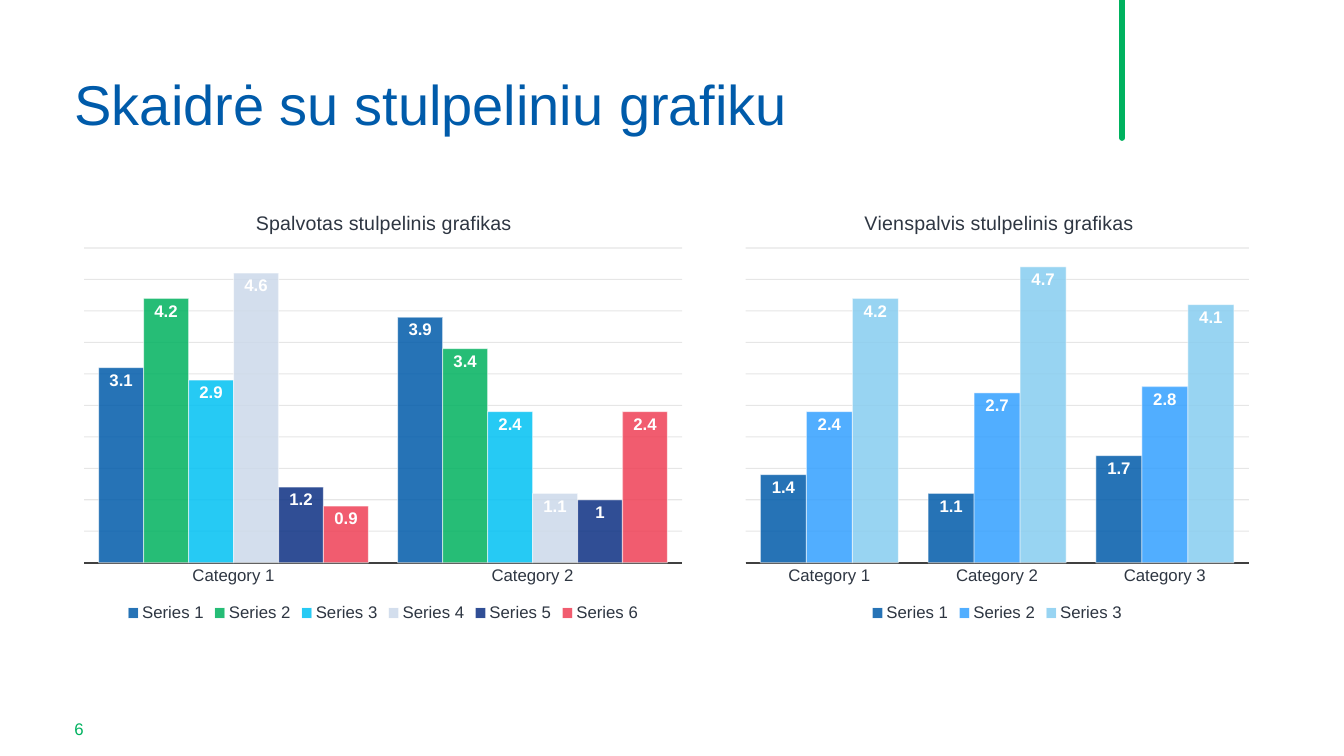
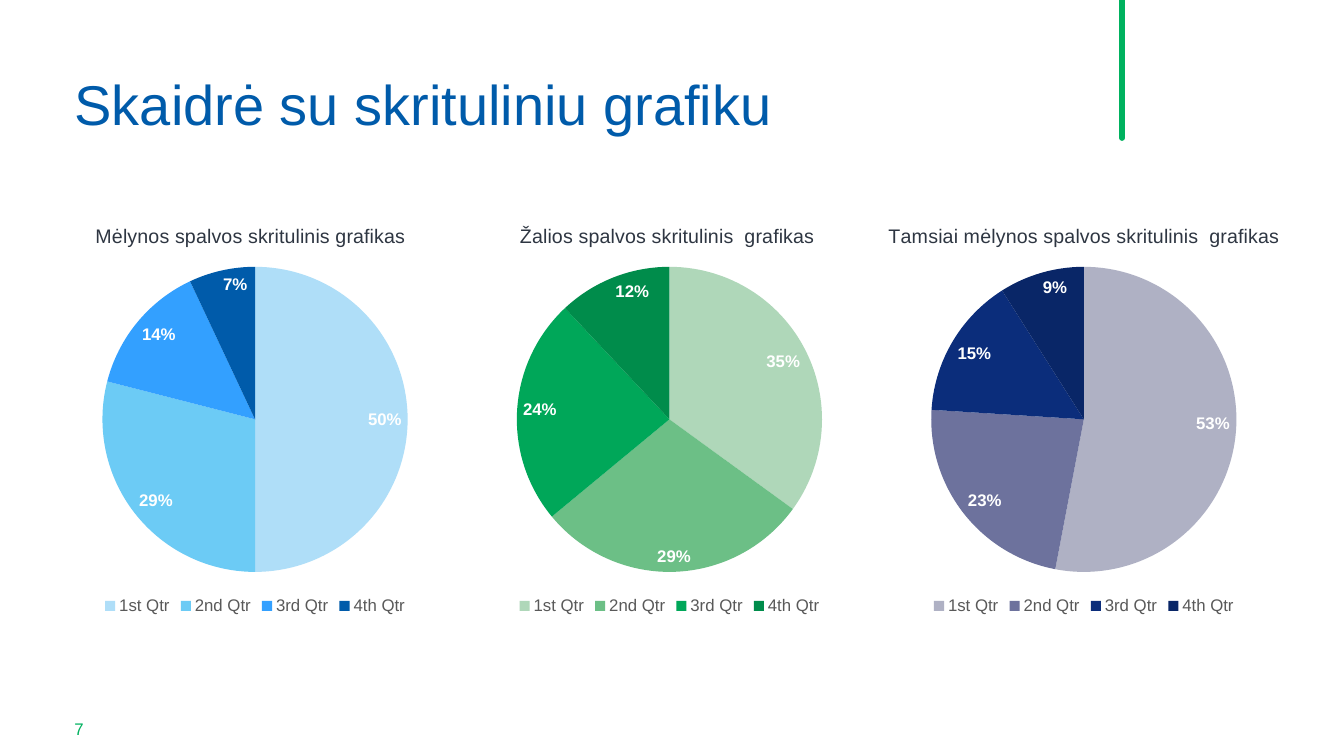
from dataclasses import dataclass

from pptx import Presentation
from pptx.chart.data import CategoryChartData
from pptx.dml.color import RGBColor
from pptx.enum.chart import XL_CHART_TYPE, XL_LABEL_POSITION, XL_LEGEND_POSITION, XL_TICK_MARK
from pptx.enum.shapes import MSO_CONNECTOR
from pptx.enum.text import MSO_ANCHOR
from pptx.oxml import parse_xml
from pptx.oxml.ns import nsdecls, qn
from pptx.util import Inches, Pt

COLUMN = XL_CHART_TYPE.COLUMN_CLUSTERED
PIE = XL_CHART_TYPE.PIE
INSIDE_END = XL_LABEL_POSITION.INSIDE_END
LEGEND_BOTTOM = XL_LEGEND_POSITION.BOTTOM
NO_TICK = XL_TICK_MARK.NONE
STRAIGHT = MSO_CONNECTOR.STRAIGHT
BOTTOM = MSO_ANCHOR.BOTTOM


@dataclass(frozen=True)
class Theme:
    font: str = "Arial"
    blue: str = "005BAA"
    green: str = "00B25F"
    number: str = "00B260"
    ink: str = "2E3642"
    grey: str = "595959"
    axis: str = "404040"
    grid: str = "0D0D0D"
    white: str = "FFFFFF"
    title_size: int = 40
    chart_title_size: int = 14
    text_size: int = 12


theme = Theme()


def style(font, size, color, bold=False):
    font.name = theme.font
    font.size = Pt(size)
    font.bold = bold
    font.color.rgb = RGBColor.from_string(color)


def fade(element, percent):
    for color in element.iter(qn("a:srgbClr")):
        color.append(parse_xml(f'<a:alpha {nsdecls("a")} val="{percent * 1000}"/>'))


quarters = ["1st Qtr", "2nd Qtr", "3rd Qtr", "4th Qtr"]
pie_pitch, pie_top, pie_width, pie_height = 4.11, 2.06, 5.06, 4.08
pies = [
    ("Mėlynos spalvos skritulinis grafikas", 0.18,
     [50, 29, 14, 7], ["AFDEF8", "6CCBF5", "33A0FF", "005BAA"]),
    ("Žalios spalvos skritulinis  grafikas", 0.2,
     [35, 29, 24, 12], ["AFD7B9", "6CBF86", "00A759", "008C4B"]),
    ("Tamsiai mėlynos spalvos skritulinis  grafikas", 0.11,
     [53, 23, 15, 9], ["AFB1C4", "6D729D", "0B2D7B", "092667"]),
]

column_charts = [
    (COLUMN, "Spalvotas stulpelinis grafikas", 0.29, (0.71, 1.92, 6.18, 4.29),
     ["Category 1", "Category 2"],
     [[3.1, 3.9], [4.2, 3.4], [2.9, 2.4], [4.6, 1.1], [1.2, 1], [0.9, 2.4]],
     ["005BAA", "00B25F", "00C1F3", "CCD9EA", "0C3083", "EF4056"]),
    (COLUMN, "Vienspalvis stulpelinis grafikas", 0.24, (7.29, 1.92, 5.2, 4.29),
     ["Category 1", "Category 2", "Category 3"],
     [[1.4, 1.1, 1.7], [2.4, 2.7, 2.8], [4.2, 4.7, 4.1]],
     ["005BAA", "33A0FF", "87CDF0"]),
]
pie_charts = [
    (PIE, heading, heading_left,
     (index * pie_pitch, pie_top, pie_width, pie_height),
     quarters, [shares], colors)
    for index, (heading, heading_left, shares, colors) in enumerate(pies)
]
pages = [
    ("6", "Skaidrė su stulpeliniu grafiku", column_charts),
    ("7", "Skaidrė su skrituliniu grafiku", pie_charts),
]

prs = Presentation()
prs.slide_width = Inches(13.33)
prs.slide_height = Inches(7.5)

for number, title, charts in pages:
    slide = prs.slides.add_slide(prs.slide_layouts[6])

    accent = slide.shapes.add_connector(STRAIGHT, Inches(11.13), 0, Inches(11.13), Inches(1.37))
    accent.line.color.rgb = RGBColor.from_string(theme.green)
    accent.line.width = Pt(4)
    accent.get_or_add_ln().set("cap", "rnd")
    accent._element.spPr.append(parse_xml(f'<a:effectLst {nsdecls("a")}/>'))

    heading_frame = slide.shapes.add_textbox(
        Inches(0.74), Inches(0.7), Inches(10.17), Inches(0.67)).text_frame
    heading_frame.margin_left = heading_frame.margin_right = 0
    heading_frame.margin_top = heading_frame.margin_bottom = 0
    heading_frame.vertical_anchor = BOTTOM
    heading_frame.word_wrap = True
    heading_frame.text = title
    heading_frame.paragraphs[0].line_spacing = 0.9
    style(heading_frame.paragraphs[0].runs[0].font, theme.title_size, theme.blue)

    number_frame = slide.shapes.add_textbox(
        Inches(0.64), Inches(7.08), Inches(0.46), Inches(0.27)).text_frame
    number_frame.word_wrap = True
    number_frame.text = number
    style(number_frame.paragraphs[0].runs[0].font, theme.text_size, theme.number)

    for kind, heading, heading_left, box, categories, rows, colors in charts:
        is_pie = kind == PIE
        data = CategoryChartData()
        data.categories = categories
        for index, values in enumerate(rows, 1):
            data.add_series(f"Series {index}", values)
        chart = slide.shapes.add_chart(kind, *map(Inches, box), data).chart
        style(chart.font, theme.text_size, theme.ink)
        chart._chartSpace.chart.addnext(parse_xml(
            f'<c:spPr {nsdecls("c", "a")}><a:noFill/><a:ln><a:noFill/></a:ln></c:spPr>'))

        chart.has_title = True
        chart_heading = chart.chart_title.text_frame
        chart_heading.text = heading
        chart_heading.word_wrap = False
        style(chart_heading.paragraphs[0].runs[0].font, theme.chart_title_size, theme.ink)
        chart.has_legend = True
        chart.legend.position = LEGEND_BOTTOM
        chart.legend.include_in_layout = False
        style(chart.legend.font, theme.text_size, theme.grey if is_pie else theme.ink)

        plot_box = (0.2, 0.144, 0.6, 0.742) if is_pie else (0.02, 0.126, 0.96, 0.728)
        layouts = [
            (chart._chartSpace.chart.plotArea, 0, '<c:layoutTarget val="inner"/>',
             zip("xywh", plot_box)),
            (chart.chart_title._element, 1, "", zip("xy", (heading_left, 0.03))),
        ]
        for part, position, target, fractions in layouts:
            for old_layout in part.findall(qn("c:layout")):
                part.remove(old_layout)
            modes = "".join(f'<c:{side}Mode val="edge"/>' for side in "xy")
            sides = "".join(f'<c:{side} val="{value}"/>' for side, value in fractions)
            part.insert(position, parse_xml(
                f'<c:layout {nsdecls("c")}><c:manualLayout>{target}{modes}{sides}'
                '</c:manualLayout></c:layout>'))

        plot = chart.plots[0]
        plot.vary_by_categories = is_pie
        for index, series in enumerate(plot.series):
            if is_pie:
                for point_index, color in enumerate(colors):
                    fill = series.points[point_index].format.fill
                    fill.solid()
                    fill.fore_color.rgb = RGBColor.from_string(color)
            else:
                series.format.fill.solid()
                series.format.fill.fore_color.rgb = RGBColor.from_string(colors[index])
                fade(series._element.spPr, 85)
                series.format.line.color.rgb = RGBColor.from_string(theme.white)
                series.format.line.width = Pt(0.75)
                fade(series._element.spPr.find(qn("a:ln")), 50)
            labels = series.data_labels
            style(labels.font, theme.text_size, theme.white, bold=True)
            labels.position = INSIDE_END
            labels.show_value = not is_pie
            labels.show_percentage = is_pie
            if is_pie:
                labels.number_format = "0%"
                labels.number_format_is_linked = False

        if not is_pie:
            plot.gap_width = 65
            plot.overlap = 0
            scale = chart.value_axis
            scale.minimum_scale, scale.maximum_scale, scale.major_unit = 0, 5, 0.5
            scale.visible = False
            grid = scale.major_gridlines
            grid.format.line.color.rgb = RGBColor.from_string(theme.grid)
            grid.format.line.width = Pt(0.75)
            fade(scale._element.find(qn("c:majorGridlines")), 10)
            names = chart.category_axis
            names.major_tick_mark = names.minor_tick_mark = NO_TICK
            names.format.line.color.rgb = RGBColor.from_string(theme.axis)
            names.format.line.width = Pt(1.5)
            style(names.tick_labels.font, theme.text_size, theme.ink)

prs.save("out.pptx")
